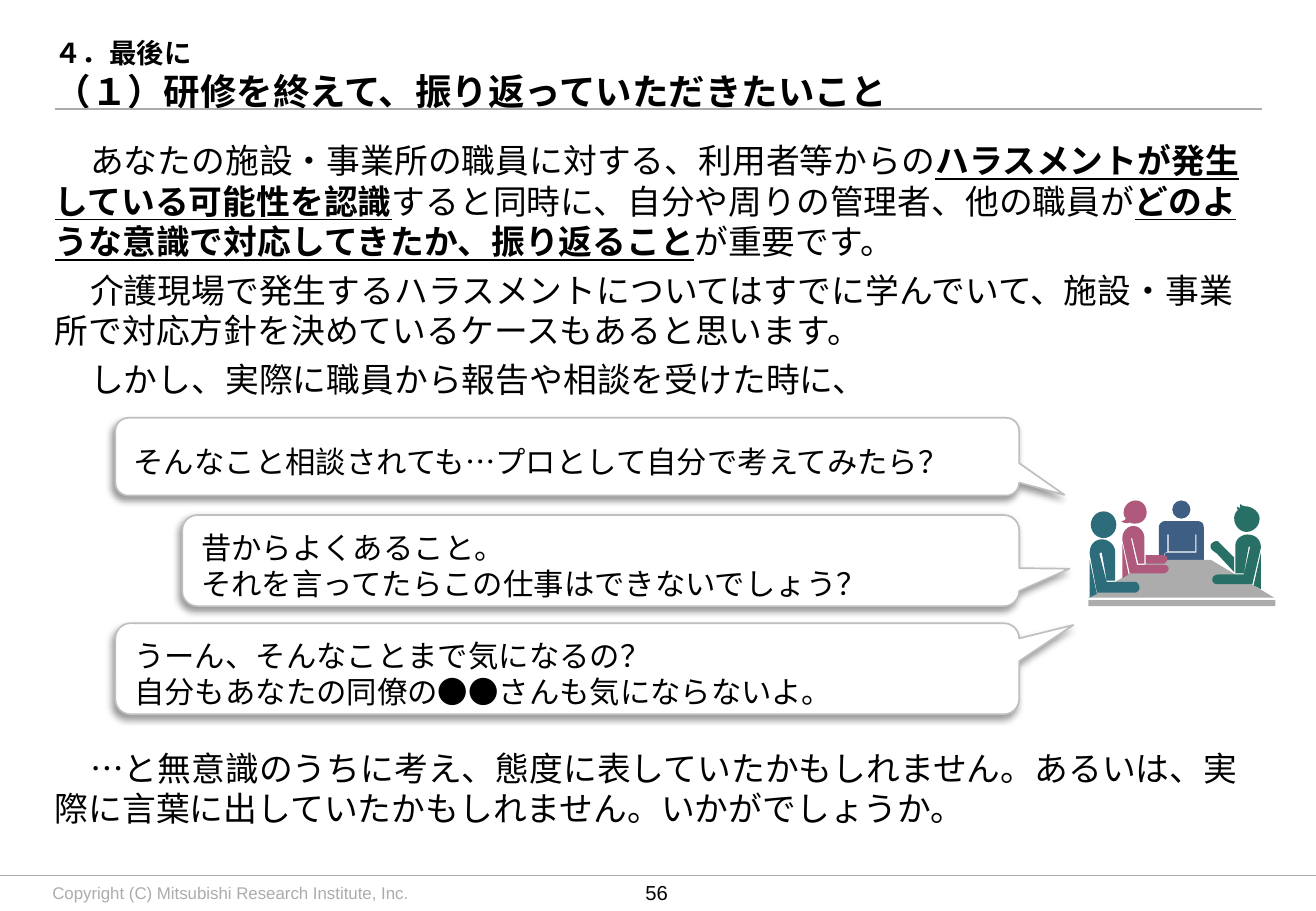
from lxml import etree
from pptx import Presentation
from pptx.dml.color import RGBColor
from pptx.enum import shapes, text
from pptx.oxml import ns
from pptx.util import Pt

BLACK = RGBColor(0x00, 0x00, 0x00)
WHITE = RGBColor(0xFF, 0xFF, 0xFF)
GRAY = RGBColor(0xAC, 0xAC, 0xAC)
BORDER = RGBColor(0xBF, 0xBF, 0xBF)
BLUE = RGBColor(0x3E, 0x5E, 0x84)
PINK = RGBColor(0xAF, 0x5A, 0x7D)
TEAL = RGBColor(0x2D, 0x6C, 0x7B)
GREEN = RGBColor(0x28, 0x6F, 0x66)
JAPANESE, LATIN = "Noto Sans CJK JP", "Arial"
LEFT, WIDTH = 32.4, 715.7
GRID = 0.72  # points per unit of the meeting drawing
CURVE_STEPS = 6


def flatten(start, segments):
    """Turn line ends (x, y) and cubic curves (six numbers) into points."""
    points = [start]
    for segment in segments:
        if len(segment) == 2:
            points.append(segment)
            continue
        corners = [points[-1], segment[:2], segment[2:4], segment[4:]]
        for step in range(1, CURVE_STEPS + 1):
            t = step / CURVE_STEPS
            weights = ((1 - t) ** 3, 3 * t * (1 - t) ** 2, 3 * t * t * (1 - t), t ** 3)
            points.append(tuple(sum(w * c[axis] for w, c in zip(weights, corners))
                                for axis in (0, 1)))
    return [(Pt(x * GRID), Pt(y * GRID)) for x, y in points]


class SlideBuilder:
    def __init__(self, slide):
        self.slide = slide
        self.meeting = None

    def frame(self, shape, margins=(0, 0, 0, 0), anchor=text.MSO_ANCHOR.MIDDLE):
        frame = shape.text_frame
        frame.word_wrap = True
        frame.auto_size = text.MSO_AUTO_SIZE.NONE
        frame.vertical_anchor = anchor
        (frame.margin_left, frame.margin_top,
         frame.margin_right, frame.margin_bottom) = map(Pt, margins)
        return frame

    def style(self, paragraph, size, name=JAPANESE, color=BLACK, bold=False,
              spacing=None, align=text.PP_ALIGN.LEFT):
        paragraph.alignment = align
        if spacing:
            paragraph.line_spacing = Pt(spacing)
        font = paragraph.font
        font.size, font.bold, font.name = Pt(size), bold, name
        font.color.rgb = color
        properties = paragraph._p.pPr.find(ns.qn("a:defRPr"))
        etree.SubElement(properties, ns.qn("a:ea"), typeface=name)

    def place(self, shape, left, top, width, height):
        shape.left, shape.top, shape.width, shape.height = map(Pt, (left, top, width, height))

    def title(self, section, heading):
        shape = self.slide.shapes.title
        self.place(shape, LEFT, 19.5, WIDTH, 43.2)
        paragraph = self.frame(shape).paragraphs[0]
        self.style(paragraph, 16.2, bold=True, spacing=26)
        paragraph.add_run().text = section
        paragraph.add_line_break()
        run = paragraph.add_run()
        run.text = heading
        run.font.size = Pt(21.6)

    def body(self, paragraphs):
        """Each paragraph is a space before and runs; odd runs are emphasised."""
        shape = self.slide.placeholders[1]
        self.place(shape, LEFT, 83, WIDTH, 414)
        frame = self.frame(shape, anchor=text.MSO_ANCHOR.TOP)
        for index, (space, runs) in enumerate(paragraphs):
            paragraph = frame.add_paragraph() if index else frame.paragraphs[0]
            properties = paragraph._p.get_or_add_pPr()
            properties.set("marL", "0")
            properties.set("indent", str(Pt(21)))
            etree.SubElement(properties, ns.qn("a:buNone"))
            paragraph.space_before = Pt(space)
            self.style(paragraph, 20, spacing=24)
            for position, words in enumerate(runs):
                run = paragraph.add_run()
                run.text = words
                if position % 2:
                    run.font.bold = run.font.underline = True

    def label(self, words, box, size, color, align):
        shape = self.slide.shapes.add_textbox(*map(Pt, box))
        paragraph = self.frame(shape).paragraphs[0]
        paragraph.text = words
        self.style(paragraph, size, LATIN, color, align=align)

    def rule(self, left, right, top, weight):
        line = self.slide.shapes.add_connector(
            shapes.MSO_CONNECTOR.STRAIGHT, Pt(left), Pt(top), Pt(right), Pt(top))
        line.line.color.rgb = GRAY
        line.line.width = Pt(weight)
        etree.SubElement(line._element.spPr, ns.qn("a:effectLst"))

    def callout(self, lines, box, tip):
        shape = self.slide.shapes.add_shape(
            shapes.MSO_SHAPE.ROUNDED_RECTANGULAR_CALLOUT, *map(Pt, box))
        shape.adjustments[0], shape.adjustments[1] = tip
        self.paint(shape, WHITE)
        shape.line.color.rgb = BORDER
        shape.line.width = Pt(1)
        effects = shape._element.spPr.find(ns.qn("a:effectLst"))
        shadow = etree.SubElement(effects, ns.qn("a:outerShdw"), blurRad=str(Pt(4)),
                                  dist=str(Pt(3)), dir="8100000", algn="tr", rotWithShape="0")
        color = etree.SubElement(shadow, ns.qn("a:srgbClr"), val=str(BLACK))
        etree.SubElement(color, ns.qn("a:alpha"), val="40000")
        frame = self.frame(shape, (8.6, 6, 0, 0))
        for index, words in enumerate(lines):
            paragraph = frame.add_paragraph() if index else frame.paragraphs[0]
            paragraph.text = words
            self.style(paragraph, 18, spacing=21.5)

    def paint(self, shape, color):
        shape.fill.solid()
        shape.fill.fore_color.rgb = color
        shape.line.fill.background()
        shape.shadow.inherit = False

    def start_meeting(self):
        self.meeting = self.slide.shapes.add_group_shape().shapes

    def piece(self, kind, box, color):
        self.paint(self.meeting.add_shape(kind, *(Pt(v * GRID) for v in box)), color)

    def outline(self, color, start, *segments):
        points = flatten(start, segments)
        builder = self.meeting.build_freeform(*points[0])
        builder.add_line_segments(points[1:], close=True)
        self.paint(builder.convert_to_shape(), color)


def main():
    presentation = Presentation()
    presentation.slide_width, presentation.slide_height = Pt(780), Pt(540)
    build = SlideBuilder(presentation.slides.add_slide(presentation.slide_layouts[1]))

    # Frame: rules, copyright line and page number
    build.rule(0, 780, 519.1, 0.75)
    build.rule(LEFT, LEFT + WIDTH, 64.8, 1)
    build.label("Copyright (C) Mitsubishi Research Institute, Inc.",
                (31, 523.4, 360, 12.2), 10, GRAY, text.PP_ALIGN.LEFT)
    build.label("56", (370.8, 519.1, 36.7, 20.2), 12, BLACK, text.PP_ALIGN.CENTER)

    # Title and body; the wide gap leaves room for the callouts
    build.title("４．最後に", "（１）研修を終えて、振り返っていただきたいこと")
    build.body([
        (0, ["あなたの施設・事業所の職員に対する、利用者等からの",
             "ハラスメントが発生している可能性を認識",
             "すると同時に、自分や周りの管理者、他の職員が",
             "どのような意識で対応してきたか、振り返ること", "が重要です。"]),
        (4.8, ["介護現場で発生するハラスメントについてはすでに学んでいて、"
               "施設・事業所で対応方針を決めているケースもあると思います。"]),
        (4.8, ["しかし、実際に職員から報告や相談を受けた時に、"]),
        (206.4, ["…と無意識のうちに考え、態度に表していたかもしれません。"
                 "あるいは、実際に言葉に出していたかもしれません。いかがでしょうか。"]),
    ])

    # Callouts
    build.callout(["そんなこと相談されても…プロとして自分で考えてみたら？"],
                  (68.4, 247.7, 535.7, 46.1), (0.55, 0.49))
    build.callout(["昔からよくあること。", "それを言ってたらこの仕事はできないでしょう？"],
                  (108, 305.3, 496.1, 54), (0.56, 0.09))
    build.callout(["うーん、そんなことまで気になるの？", "自分もあなたの同僚の●●さんも気にならないよ。"],
                  (68.4, 369.4, 535.7, 54), (0.56, -0.48))

    # Meeting: person at the far side, then the table
    build.start_meeting()
    oval, rectangle = shapes.MSO_SHAPE.OVAL, shapes.MSO_SHAPE.RECTANGLE
    build.piece(oval, (965, 412, 15, 15), BLUE)
    build.outline(BLUE, (958, 458), (958, 456, 959, 455, 961, 454), (961, 440), (962, 440),
                  (962, 454), (984, 454), (984, 440), (985, 440), (985, 455), (961, 455),
                  (959, 455, 959, 456, 959, 458), (959, 459, 959, 460, 961, 461), (991, 461),
                  (991, 434), (991, 431, 989, 429, 986, 429), (959, 429),
                  (956, 429, 954, 432, 954, 434), (954, 461), (960, 461),
                  (959, 460, 958, 459, 958, 458))
    build.outline(GRAY, (997, 461), (949, 461), (896, 492), (1049, 492))
    build.piece(rectangle, (896, 494, 154, 5), GRAY)

    # Meeting: second person on the left
    build.outline(PINK, (924, 476), (929, 473), (924, 448))
    build.outline(PINK, (923, 429), (925, 431, 929, 431, 930, 430), (931, 431, 933, 431, 935, 431),
                  (940, 431, 944, 427, 944, 422), (944, 416, 940, 412, 935, 412),
                  (930, 412, 925, 416, 925, 422), (925, 424, 926, 426, 927, 427),
                  (926, 428, 925, 429, 923, 429))
    build.outline(PINK, (961, 460), (961, 458, 959, 457, 958, 457), (943, 457), (943, 464),
                  (958, 464), (959, 464, 961, 462, 961, 460))
    build.outline(PINK, (958, 472), (960, 472, 962, 470, 962, 468), (962, 466, 960, 465, 958, 465),
                  (936, 465), (931, 443), (932, 443), (937, 464), (942, 464), (942, 442),
                  (942, 438, 938, 433, 933, 433), (928, 433, 924, 438, 924, 442), (924, 445),
                  (930, 472))

    # Meeting: first person on the left
    build.outline(TEAL, (897, 461), (897, 492), (903, 489))
    build.piece(oval, (898, 421, 21, 22), TEAL)
    build.outline(TEAL, (928, 488), (934, 488), (936, 488, 938, 486, 938, 484),
                  (938, 481, 936, 479, 934, 479), (911, 479), (905, 456), (906, 455), (907, 455),
                  (911, 478), (918, 478), (918, 454), (918, 449, 913, 444, 907, 444),
                  (901, 444, 897, 449, 897, 455), (897, 456), (903, 488))

    # Meeting: person on the right
    build.outline(GREEN, (1038, 455), (1032, 482), (1038, 485))
    build.outline(GREEN, (1016, 427), (1016, 433, 1021, 438, 1026, 438),
                  (1032, 438, 1037, 433, 1037, 427), (1037, 422, 1032, 418, 1027, 417),
                  (1026, 417, 1023, 417, 1021, 415), (1021, 418), (1021, 418, 1019, 418, 1018, 417),
                  (1019, 420), (1017, 422, 1016, 424, 1016, 427))
    build.outline(GREEN, (1002, 456), (1016, 471), (1016, 459), (1004, 447),
                  (1003, 445, 1000, 445, 998, 447), (996, 448, 996, 451, 998, 453))
    build.outline(GREEN, (1038, 450), (1038, 444, 1033, 440, 1027, 440),
                  (1022, 440, 1017, 444, 1017, 449), (1017, 472), (1024, 472), (1028, 450),
                  (1029, 450), (1029, 451), (1024, 473), (1003, 473),
                  (1000, 473, 998, 475, 998, 477), (998, 480, 1000, 481, 1003, 481),
                  (1031, 481), (1038, 451))

    presentation.save("out.pptx")


if __name__ == "__main__":
    main()
